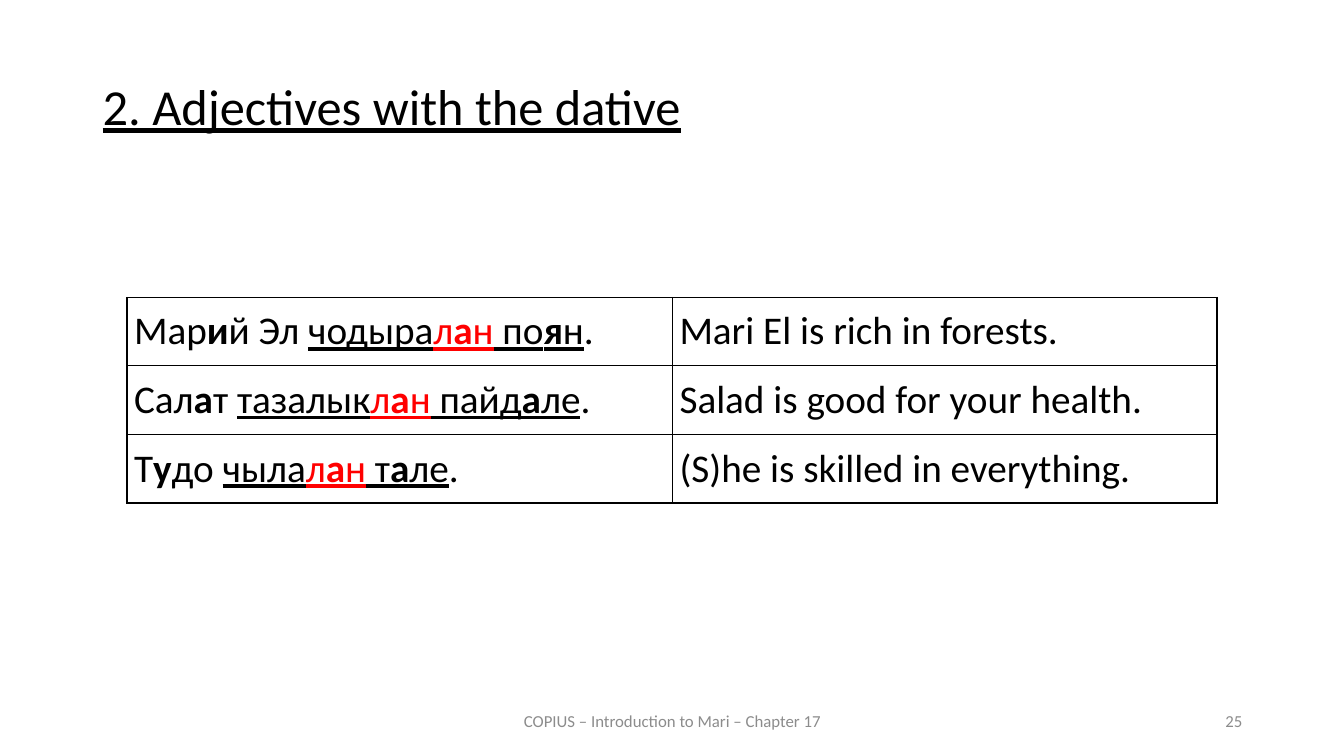
import pptx
import pptx.dml.color
import pptx.enum.text
import pptx.oxml
import pptx.oxml.ns
import pptx.util

Inches = pptx.util.Inches
Align = pptx.enum.text.PP_ALIGN
Anchor = pptx.enum.text.MSO_ANCHOR

COLORS = {"text": "000000", "suffix": "FF0000", "footer": "8C8C8C", "border": "000000"}

# Markup: *stressed vowel*, _underlined phrase_, [dative suffix]
EXAMPLES = [
    ("Мар*и*й Эл _чодыра[л*а*н] по*я*н_.", "Mari El is rich in forests."),
    ("Сал*а*т _тазалык[л*а*н] пайд*а*ле_.", "Salad is good for your health."),
    ("Т*у*до _чыла[л*а*н] т*а*ле_.", "(S)he is skilled in everything."),
]


def split_markup(text):
    """Return (piece, bold, underline, suffix) for each run of marked-up text."""
    pieces, piece = [], ""
    bold = underline = suffix = False
    for character in text:
        if character not in "*_[]":
            piece += character
            continue
        if piece:
            pieces.append((piece, bold, underline, suffix))
            piece = ""
        if character == "*":
            bold = not bold
        elif character == "_":
            underline = not underline
        else:
            suffix = character == "["
    if piece:
        pieces.append((piece, bold, underline, suffix))
    return pieces


def write_text(frame, text, size, font="Calibri", color="text", align=Align.LEFT,
               line_spacing=None, space_before=None):
    paragraph = frame.paragraphs[0]
    paragraph.alignment = align
    if line_spacing is not None:
        paragraph.line_spacing = line_spacing
    if space_before is not None:
        paragraph.space_before = pptx.util.Pt(space_before)
    for piece, bold, underline, suffix in split_markup(text):
        run = paragraph.add_run()
        run.text = piece
        run.font.name = font
        run.font.size = pptx.util.Pt(size)
        run.font.bold = bold
        run.font.underline = underline
        run.font.color.rgb = pptx.dml.color.RGBColor.from_string(
            COLORS["suffix" if suffix else color])


def set_borders(cell, color, width):
    properties = cell._tc.get_or_add_tcPr()
    for position, side in enumerate(("lnL", "lnR", "lnT", "lnB")):
        line = pptx.oxml.parse_xml(
            f'<a:{side} {pptx.oxml.ns.nsdecls("a")} w="{pptx.util.Pt(width)}">'
            f'<a:solidFill><a:srgbClr val="{color}"/></a:solidFill></a:{side}>')
        properties.insert(position, line)


class LessonSlide:
    def __init__(self, presentation):
        self.slide = presentation.slides.add_slide(presentation.slide_layouts[6])

    def text(self, text, left, top, width, height, anchor=Anchor.TOP, **style):
        box = self.slide.shapes.add_textbox(
            Inches(left), Inches(top), Inches(width), Inches(height))
        box.text_frame.word_wrap = True
        box.text_frame.vertical_anchor = anchor
        write_text(box.text_frame, text, **style)

    def table(self, rows, left, top, column_widths, row_height, **style):
        table = self.slide.shapes.add_table(
            len(rows), len(column_widths), Inches(left), Inches(top),
            Inches(sum(column_widths)), Inches(row_height * len(rows))).table
        table.first_row = table.horz_banding = False
        for column, width in zip(table.columns, column_widths):
            column.width = Inches(width)
        for row, texts in zip(table.rows, rows):
            row.height = Inches(row_height)
            for cell, text in zip(row.cells, texts):
                cell.fill.background()
                cell.vertical_anchor = Anchor.MIDDLE
                cell.margin_left = cell.margin_right = Inches(0.07)
                cell.margin_top = cell.margin_bottom = 0
                set_borders(cell, COLORS["border"], 1)
                write_text(cell.text_frame, text, **style)


def main():
    presentation = pptx.Presentation()
    presentation.slide_width = Inches(13.33)
    presentation.slide_height = Inches(7.5)

    lesson = LessonSlide(presentation)
    lesson.text("_2. Adjectives with the dative_", 0.92, 0.76, 11.5, 0.99, size=36,
                align=Align.JUSTIFY, line_spacing=0.9, space_before=12)
    lesson.table(EXAMPLES, 1.26, 2.95, (5.41, 5.4), 0.68, size=28)
    footer = {"anchor": Anchor.MIDDLE, "size": 12, "color": "footer"}
    lesson.text("COPIUS – Introduction to Mari – Chapter 17", 4.42, 6.95, 4.5, 0.4,
                align=Align.CENTER, **footer)
    lesson.text("25", 9.42, 6.95, 3, 0.4, align=Align.RIGHT, **footer)

    presentation.save("out.pptx")


if __name__ == "__main__":
    main()
